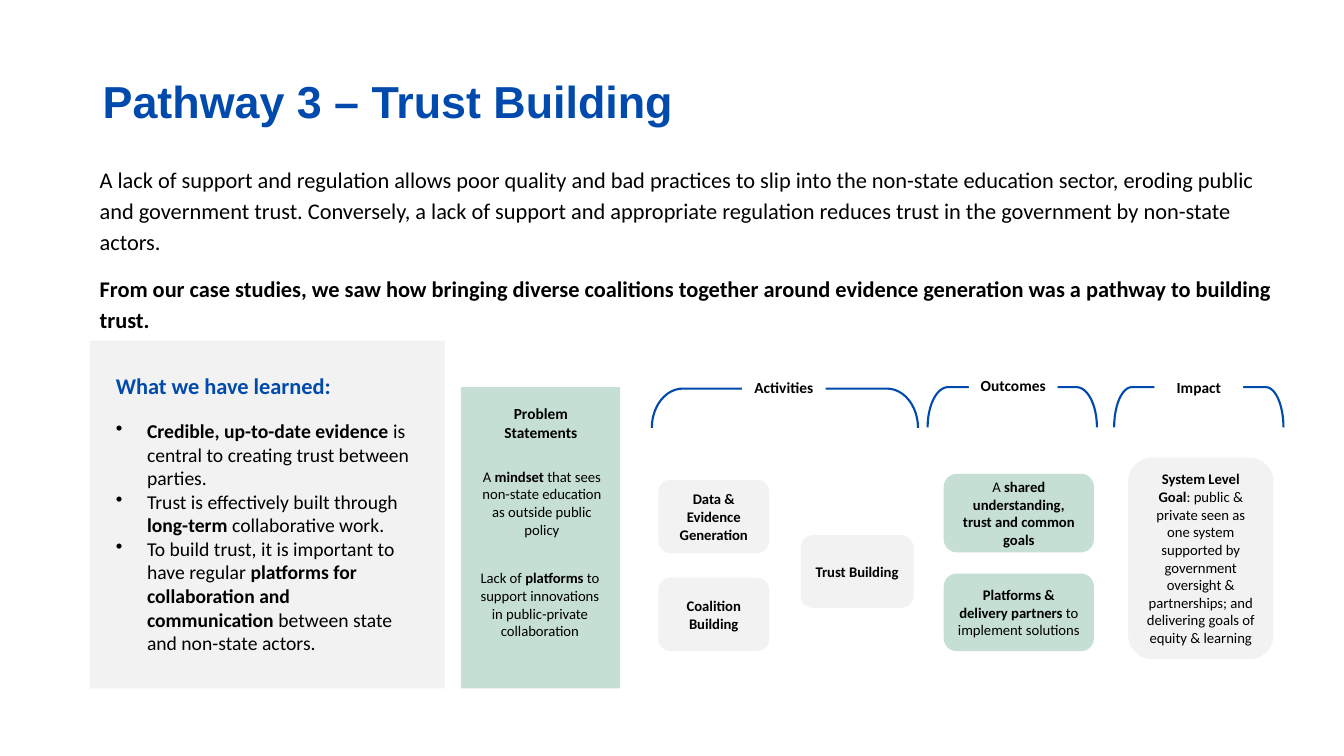
import pptx
import pptx.dml.color
import pptx.enum.shapes
import pptx.enum.text
import pptx.oxml.ns
import pptx.util
from lxml import etree

PX = 9144
BLUE, GREEN, GREY, WHITE, BLACK = "004AAD", "C6DFD4", "F2F2F2", "FFFFFF", "000000"
SHAPES = pptx.enum.shapes.MSO_SHAPE
ALIGN = pptx.enum.text.PP_ALIGN
ANCHOR = pptx.enum.text.MSO_ANCHOR


def colour(value):
    """Turn a hex string into a colour."""
    return pptx.dml.color.RGBColor.from_string(value)


def lengths(place):
    """Turn px into EMU."""
    return [value * PX for value in place]


def set_values(target, values):
    """Set every attribute named in a dict."""
    for name, value in values.items():
        setattr(target, name, value)


def write(box, texts, size, tint=BLACK, font="Calibri", anchor=ANCHOR.TOP, **layout):
    """Write paragraphs in which double asterisks switch bold on and off."""
    set_values(box.text_frame, {"word_wrap": True, "vertical_anchor": anchor})
    for index, text in enumerate(texts):
        para = box.text_frame.add_paragraph() if index else box.text_frame.paragraphs[0]
        set_values(para, layout)
        for part, words in enumerate(text.split("**")):
            if words:
                span = para.add_run()
                span.text = words
                set_values(span.font, {"name": font, "size": pptx.util.Pt(size), "bold": part % 2 == 1})
                span.font.color.rgb = colour(tint)


def add_text(page, place, texts, size, **style):
    """Add a text box."""
    box = page.shapes.add_textbox(*lengths(place))
    write(box, texts, size, **style)
    return box


def add_panel(page, place, fill=None, kind=SHAPES.RECTANGLE):
    """Add a borderless shape, filled or clear."""
    box = page.shapes.add_shape(kind, *lengths(place))
    box.shadow.inherit = False
    box.line.fill.background()
    if fill:
        box.fill.solid()
        box.fill.fore_color.rgb = colour(fill)
    else:
        box.fill.background()
    return box


def add_card(page, place, fill, text):
    """Add a rounded card with centred text."""
    box = add_panel(page, place, fill, SHAPES.ROUNDED_RECTANGLE)
    if not fill:
        box.adjustments[0] = 0
    write(box, [text], 10.5, anchor=ANCHOR.MIDDLE, alignment=ALIGN.CENTER)


def add_stage(page, bracket, curve, label, name):
    """Add a bracket that opens downwards, with its label over the line."""
    box = add_panel(page, bracket, kind=SHAPES.RIGHT_BRACKET)
    set_values(box, {"rotation": 270})
    box.adjustments[0] = curve
    box.line.color.rgb = colour(BLUE)
    box.line.width = pptx.util.Pt(1.5)
    tag = add_panel(page, label, WHITE)
    write(tag, [f"**{name}**"], 11, alignment=ALIGN.CENTER)


def add_bullets(box, indent):
    """Give every paragraph a hanging bullet."""
    for para in box.text_frame.paragraphs:
        properties = para._p.get_or_add_pPr()
        properties.set("marL", str(indent * PX))
        properties.set("indent", str(-indent * PX))
        bullet = etree.SubElement(properties, pptx.oxml.ns.qn("a:buChar"))
        bullet.set("char", "•")


def add_lessons(page):
    """Add the panel of lessons."""
    add_panel(page, (89, 338, 352, 345), GREY)
    add_text(page, (105, 364, 242, 37), ["**What we have learned:**"], 16, tint=BLUE)
    lessons = add_text(page, (105, 411, 312, 246), [
        "**Credible, up-to-date evidence **is central to creating trust between parties.",
        "Trust is effectively built through **long-term** collaborative work.",
        "To build trust, it is important to have regular **platforms for collaboration and "
        "communication **between state and non-state actors.",
    ], 14)
    add_bullets(lessons, 31)


def add_pathway(page):
    """Add the problem column, the stages and their cards."""
    add_panel(page, (457, 384, 158, 299), GREEN)
    add_text(page, (466, 396, 141, 29), ["**Problem Statements**"], 11, alignment=ALIGN.CENTER)
    stages = [
        ((759, 273, 39, 264), 0.79, (736, 370, 83, 29), "Activities"),
        ((984, 320, 40, 168), 0.51, (961, 368, 88, 29), "Outcomes"),
        ((1169, 320, 40, 168), 0.44, (1145, 370, 88, 29), "Impact"),
    ]
    for stage in stages:
        add_stage(page, *stage)
    cards = [
        ((463, 461, 149, 76), None, "A **mindset** that sees non-state education as outside public policy"),
        ((461, 544, 149, 111), None,
         "Lack of **platforms** to support innovations in public-private collaboration"),
        ((653, 476, 110, 73), GREY, "**Data & Evidence Generation**"),
        ((653, 573, 110, 73), GREY, "**Coalition Building**"),
        ((794, 531, 112, 72), GREY, "**Trust Building**"),
        ((936, 470, 149, 78), GREEN, "A **shared understanding, trust and common goals**"),
        ((936, 569, 149, 77), GREEN, "**Platforms & delivery partners **to implement solutions"),
        ((1119, 454, 144, 200), GREY,
         "**System Level Goal**: public & private seen as one system supported by government "
         "oversight & partnerships; and delivering goals of equity & learning"),
    ]
    for card in cards:
        add_card(page, *card)


def main():
    """Build the slide and save it."""
    deck = pptx.Presentation()
    set_values(deck, {"slide_width": 1333 * PX, "slide_height": 750 * PX})
    page = deck.slides.add_slide(deck.slide_layouts[6])
    add_text(page, (92, 40, 679, 126), ["**Pathway 3 – Trust Building**"], 32, tint=BLUE,
             font="Arial", anchor=ANCHOR.MIDDLE, line_spacing=0.9)
    add_text(page, (89, 156, 1184, 180), [
        "A lack of support and regulation allows poor quality and bad practices to slip into the "
        "non-state education sector, eroding public and government trust. Conversely, a lack of "
        "support and appropriate regulation reduces trust in the government by non-state actors.",
        "**From our case studies, we saw how bringing diverse coalitions together around evidence "
        "generation was a pathway to building trust.**",
    ], 16, line_spacing=1.15, space_before=pptx.util.Pt(6), space_after=pptx.util.Pt(6))
    add_lessons(page)
    add_pathway(page)
    deck.save("out.pptx")


if __name__ == "__main__":
    main()
